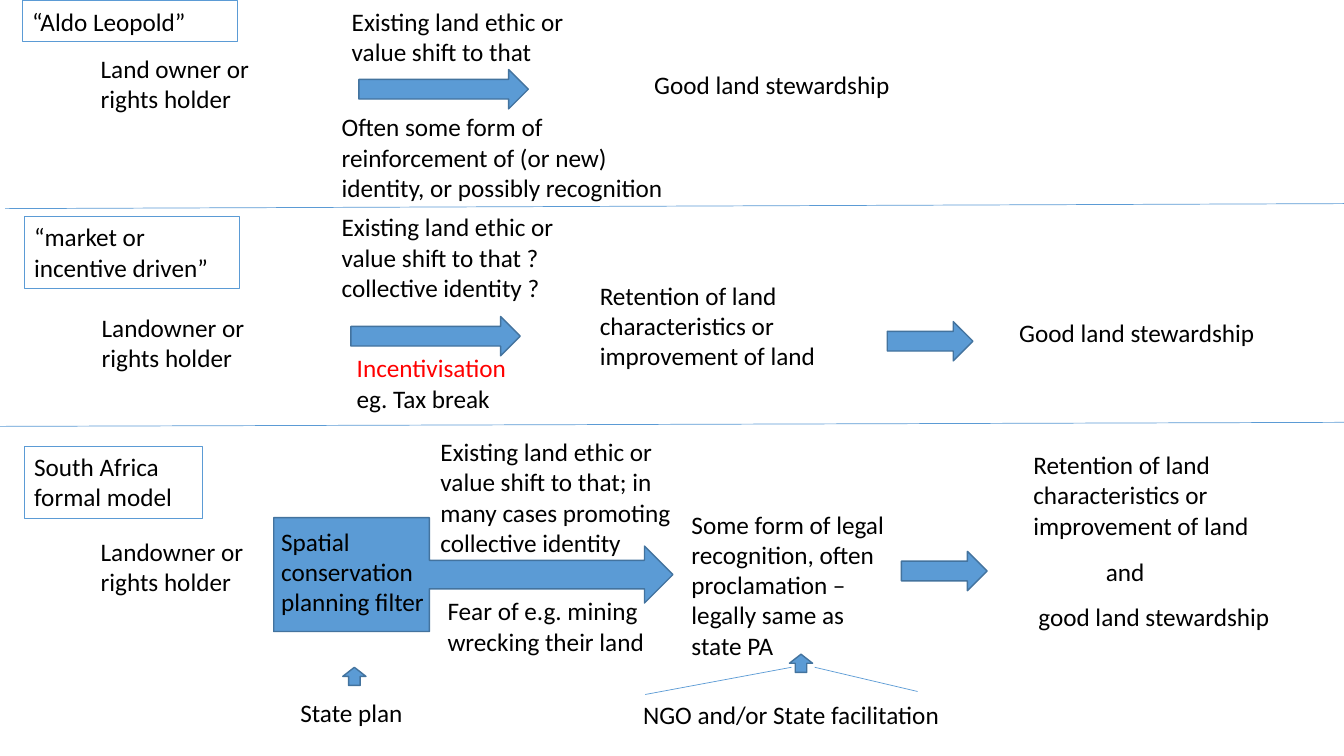
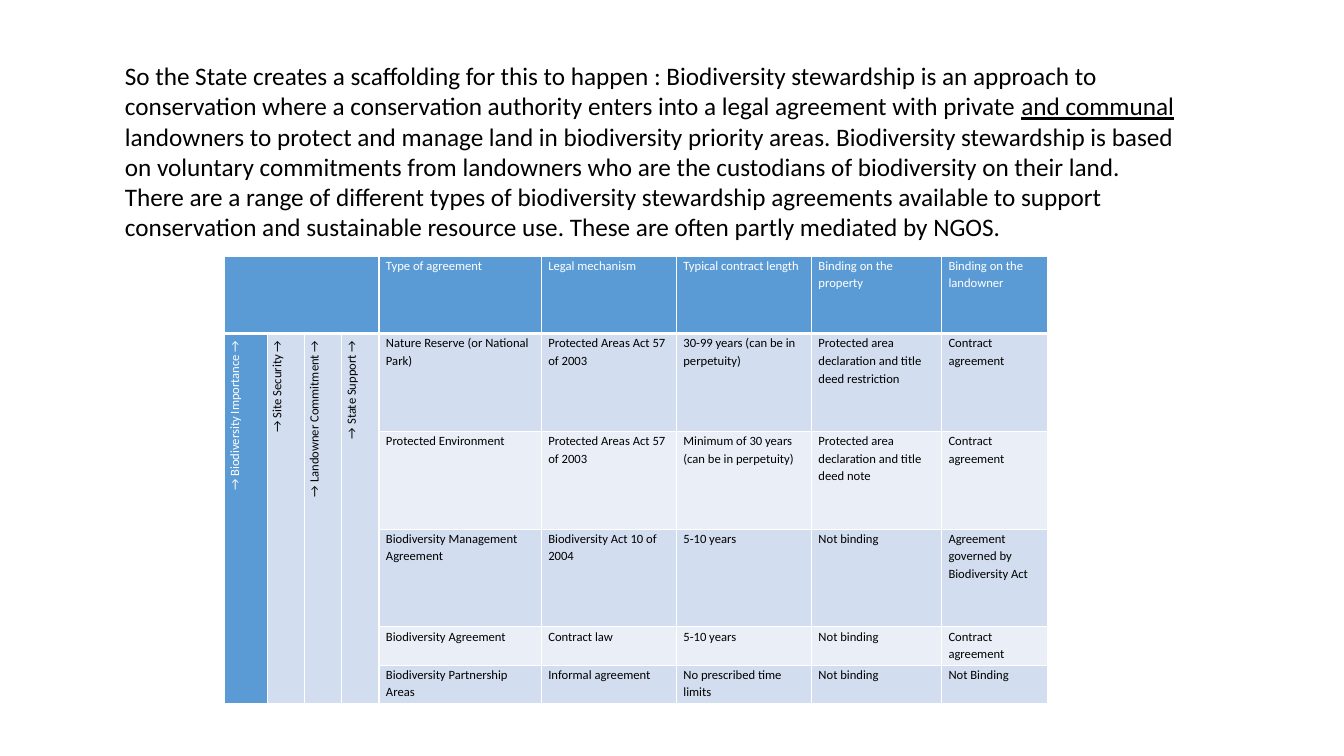
"""Build two slides on models of land stewardship."""
from lxml import etree
from pptx import Presentation
from pptx import util as u
from pptx.dml.color import RGBColor
from pptx.enum import shapes, text
from pptx.oxml import ns

BLUE = RGBColor(0x5B, 0x9B, 0xD5)
DARK_BLUE = RGBColor(0x43, 0x73, 0x9E)
BAND = RGBColor(0xD2, 0xDE, 0xEF)
PALE_BAND = RGBColor(0xEA, 0xEF, 0xF7)
BLACK = RGBColor(0, 0, 0)
WHITE = RGBColor(255, 255, 255)
RED = RGBColor(255, 0, 0)
RIGHT = shapes.MSO_SHAPE.RIGHT_ARROW
UP = shapes.MSO_SHAPE.UP_ARROW
CALLOUT = shapes.MSO_SHAPE.DOWN_ARROW_CALLOUT

ARROWS = [
    (RIGHT, 3.56, 0.69, 1.68, 0.39),
    (RIGHT, 3.48, 3.14, 1.68, 0.39),
    (RIGHT, 8.8, 3.19, 0.85, 0.39),
    (RIGHT, 8.94, 5.47, 0.85, 0.39),
    (UP, 7.83, 6.49, 0.23, 0.18),
    (UP, 3.4, 6.62, 0.23, 0.18),
]
LINES = [
    (0.05, 2.07, 13.38, 2.02),
    (0, 4.23, 13.33, 4.19),
    (6.4, 6.89, 7.85, 6.62),
    (8.08, 6.62, 9.1, 6.86),
]
MODEL_NAMES = [
    (0.22, 0.01, 2.14, 0.4, "“Aldo Leopold”"),
    (0.24, 2.15, 2.14, 0.71, "“market or incentive driven”"),
    (0.24, 4.43, 1.77, 0.71, "South Africa formal model"),
]
RETENTION = "Retention of land characteristics or improvement of land"
LABELS = [
    (0.9, 0.48, 2.08, 0.71, "Land owner or rights holder"),
    (3.39, 0.01, 2.37, 0.71, "Existing land ethic or value shift to that"),
    (3.29, 1.06, 3.58, 1.01,
     "Often some form of reinforcement of (or new) identity, or possibly recognition"),
    (6.39, 0.64, 2.69, 0.4, "Good land stewardship"),
    (0.91, 3.05, 2.11, 0.71, "Landowner or rights holder"),
    (3.29, 2.05, 2.58, 1.01,
     "Existing land ethic or value shift to that ? collective identity ?"),
    (5.85, 2.73, 2.69, 1.01, RETENTION),
    (10.01, 3.1, 2.69, 0.4, "Good land stewardship"),
    (0.9, 5.27, 2.11, 0.71, "Landowner or rights holder"),
    (2.69, 5.17, 1.62, 1.01, "Spatial conservation planning filter"),
    (4.27, 4.28, 2.61, 1.31,
     "Existing land ethic or value shift to that; in many cases promoting collective identity"),
    (6.76, 5, 2.18, 1.62,
     "Some form of legal recognition, often proclamation –legally same as state PA"),
    (10.15, 4.41, 2.69, 1.01, RETENTION),
    (10.87, 5.47, 0.95, 0.4, "and"),
    (10.2, 5.92, 2.69, 0.4, "good land stewardship"),
    (2.88, 6.87, 1.6, 0.4, "State plan"),
    (6.28, 6.89, 3.36, 0.4, "NGO and/or State facilitation"),
]
SCAFFOLDING = [
    ("So the State creates a scaffolding for this to happen : Biodiversity stewardship is an "
     "approach to conservation where a conservation authority enters into a legal agreement "
     "with private ", {}),
    ("and communal ", {"underline": True}),
    ("landowners to protect and manage land in biodiversity priority areas. Biodiversity "
     "stewardship is based on voluntary commitments from landowners who are the custodians of "
     "biodiversity on their land. There are a range of different types of biodiversity "
     "stewardship agreements available to support conservation and sustainable resource use. "
     "These are often partly mediated by NGOS.", {}),
]
COLUMN_WIDTHS = [0.42, 0.37, 0.37, 0.37, 1.61, 1.34, 1.34, 1.29, 1.05]
ROW_HEIGHTS = [0.77, 0.97, 0.97, 0.97, 0.38, 0.38]
GRADIENTS = ["Biodiversity Importance", "Site Security", "Landowner Commitment", "State Support"]
AGREEMENTS = [
    ["Type of agreement", "Legal mechanism", "Typical contract length",
     "Binding on the property", "Binding on the landowner"],
    ["Nature Reserve (or National Park)", "Protected Areas Act 57 of 2003",
     "30-99 years (can be in perpetuity)",
     "Protected area declaration and title deed restriction", "Contract agreement"],
    ["Protected Environment", "Protected Areas Act 57 of 2003",
     "Minimum of 30 years (can be in perpetuity)",
     "Protected area declaration and title deed note", "Contract agreement"],
    ["Biodiversity Management Agreement", "Biodiversity Act 10 of 2004", "5-10 years",
     "Not binding", "Agreement governed by Biodiversity Act"],
    ["Biodiversity Agreement", "Contract law", "5-10 years", "Not binding", "Contract agreement"],
    ["Biodiversity Partnership Areas", "Informal agreement", "No prescribed time limits",
     "Not binding", "Not Binding"],
]


class Deck:
    """Hold the presentation style and the slide being drawn."""

    font = "Calibri"
    body_size = 18
    table_size = 9

    def __init__(self):
        self.presentation = Presentation()
        self.presentation.slide_width = u.Inches(13.33)
        self.presentation.slide_height = u.Inches(7.5)
        self.slide = None

    def new_slide(self):
        """Start a blank slide."""
        self.slide = self.presentation.slides.add_slide(self.presentation.slide_layouts[6])

    def styled_run(self, paragraph, content, size, color=BLACK, underline=None):
        """Add one run to a paragraph."""
        run = paragraph.add_run()
        run.text = content
        run.font.name = self.font
        run.font.size = u.Pt(size)
        run.font.color.rgb = color
        run.font.underline = underline

    def label(self, left, top, width, height, *paragraphs, outlined=False):
        """Add a text box; a paragraph is a string or a list of styled runs."""
        box = self.slide.shapes.add_textbox(*map(u.Inches, (left, top, width, height)))
        frame = box.text_frame
        frame.word_wrap = True
        frame.auto_size = text.MSO_AUTO_SIZE.SHAPE_TO_FIT_TEXT
        for index, runs in enumerate(paragraphs):
            paragraph = frame.add_paragraph() if index else frame.paragraphs[0]
            for content, style in [(runs, {})] if isinstance(runs, str) else runs:
                self.styled_run(paragraph, content, self.body_size, **style)
        if outlined:
            box.line.color.rgb = BLUE
            box.line.width = u.Pt(0.75)

    def arrow(self, kind, left, top, width, height):
        """Add a blue block arrow."""
        shape = self.slide.shapes.add_shape(kind, *map(u.Inches, (left, top, width, height)))
        shape.shadow.inherit = False
        shape.fill.solid()
        shape.fill.fore_color.rgb = BLUE
        shape.line.color.rgb = DARK_BLUE
        shape.line.width = u.Pt(1)
        return shape

    def line(self, *ends):
        """Add a thin blue line."""
        connector = self.slide.shapes.add_connector(
            shapes.MSO_CONNECTOR.STRAIGHT, *map(u.Inches, ends))
        connector.line.color.rgb = BLUE
        connector.line.width = u.Pt(0.5)
        etree.SubElement(connector._element.spPr, ns.qn("a:effectLst"))

    def table(self, left, top, widths, heights):
        """Add a plain table with the given column widths and row heights."""
        size = map(u.Inches, (left, top, sum(widths), sum(heights)))
        table = self.slide.shapes.add_table(len(heights), len(widths), *size).table
        table.first_row = table.horz_banding = False
        for column, width in zip(table.columns, widths):
            column.width = u.Inches(width)
        for row, height in zip(table.rows, heights):
            row.height = u.Inches(height)
        return table

    def cell(self, cell, content, fill, color=BLACK, bottom=1, upward=False):
        """Fill, border and letter one table cell."""
        cell.margin_left = cell.margin_right = u.Inches(0.07)
        cell.margin_top = cell.margin_bottom = 0
        properties = cell._tc.get_or_add_tcPr()
        for side, width in (("L", 1), ("R", 1), ("T", 1), ("B", bottom)):
            border = etree.SubElement(properties, ns.qn(f"a:ln{side}"), w=str(u.Pt(width)))
            solid = etree.SubElement(border, ns.qn("a:solidFill"))
            etree.SubElement(solid, ns.qn("a:srgbClr"), val=str(WHITE))
        cell.fill.solid()
        cell.fill.fore_color.rgb = fill
        paragraph = cell.text_frame.paragraphs[0]
        paragraph.line_spacing = 1.15
        paragraph.space_before = u.Pt(5)
        if upward:
            properties.set("vert", "vert270")
            paragraph.alignment = text.PP_ALIGN.RIGHT
        if content:
            self.styled_run(paragraph, content, self.table_size, color)


def draw_models(deck):
    """Draw the three stewardship models."""
    deck.new_slide()
    callout = deck.arrow(CALLOUT, 4.13, 3.72, 1.13, 3.96)
    callout.rotation = 270
    for index, value in enumerate((0.25, 0.25, 0.25, 0.39)):
        callout.adjustments[index] = value
    for arrow in ARROWS:
        deck.arrow(*arrow)
    for line in LINES:
        deck.line(*line)
    for name in MODEL_NAMES:
        deck.label(*name, outlined=True)
    for label in LABELS:
        deck.label(*label)
    deck.label(3.44, 3.45, 1.94, 0.71,
               [("Incentivisation ", {"color": RED}), ("eg. Tax break", {})])
    deck.label(4.34, 5.86, 2.22, 0.71, "Fear of e.g. mining", "wrecking their land")


def draw_agreements(deck):
    """Draw the scaffolding text and the table of agreements."""
    deck.new_slide()
    deck.label(1.14, 0.55, 10.7, 1.92, SCAFFOLDING)
    table = deck.table(2.23, 2.54, COLUMN_WIDTHS, ROW_HEIGHTS)
    first = len(GRADIENTS)
    last_row = len(AGREEMENTS) - 1
    table.cell(0, 0).merge(table.cell(0, first - 1))
    deck.cell(table.cell(0, 0), "", BLUE, bottom=3)
    for column, gradient in enumerate(GRADIENTS):
        cell = table.cell(1, column)
        cell.merge(table.cell(last_row, column))
        fill, color = (BAND, BLACK) if column else (BLUE, WHITE)
        deck.cell(cell, f"→ {gradient} →", fill, color, upward=True)
    for row, agreement in enumerate(AGREEMENTS):
        for column, content in enumerate(agreement, first):
            cell = table.cell(row, column)
            if row == 0:
                deck.cell(cell, content, BLUE, WHITE, bottom=3)
            else:
                deck.cell(cell, content, BAND if row % 2 else PALE_BAND)


def main():
    """Build and save the presentation."""
    deck = Deck()
    draw_models(deck)
    draw_agreements(deck)
    deck.presentation.save("out.pptx")


if __name__ == "__main__":
    main()
